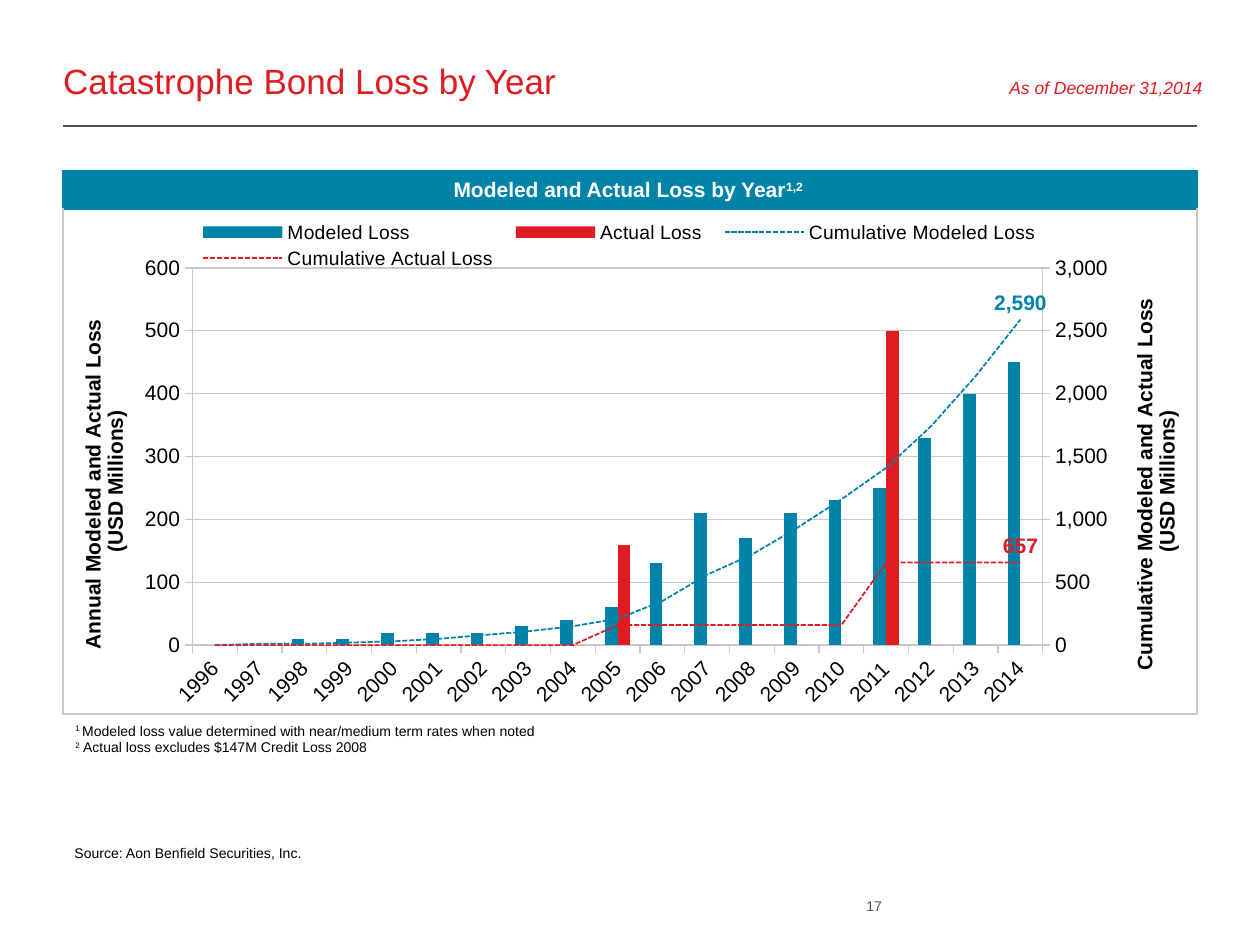
import copy

import pptx
import pptx.chart.axis
import pptx.chart.data
import pptx.dml.color
import pptx.enum.chart
import pptx.enum.dml
import pptx.enum.shapes
import pptx.enum.text
import pptx.oxml
import pptx.oxml.ns
import pptx.util

PX = 914400 / 126
COLORS = {"blue": "0083A9", "red": "E11B22", "gray": "C9CAC8",
          "dark": "4D4F53", "black": "000000", "white": "FFFFFF"}
RGB = {name: pptx.dml.color.RGBColor.from_string(value) for name, value in COLORS.items()}
qn = pptx.oxml.ns.qn
Pt = pptx.util.Pt
Align = pptx.enum.text.PP_ALIGN
Anchor = pptx.enum.text.MSO_ANCHOR


def box(*lengths):
    """Turn lengths in px into EMU."""
    return [round(length * PX) for length in lengths]


def add_runs(paragraph, parts, size, color, bold=False, italic=False):
    """Add runs from (text, is_superscript) pairs."""
    for text, superscript in parts:
        run = paragraph.add_run()
        run.text = text
        font = run.font
        font.name, font.size, font.bold, font.italic = "Arial", Pt(size), bold, italic
        font.color.rgb = RGB[color]
        if superscript:
            font._element.set("baseline", "30000")


presentation = pptx.Presentation()
presentation.slide_width, presentation.slide_height = box(1260, 945)
slide = presentation.slides.add_slide(presentation.slide_layouts[5])
shapes = slide.shapes

# Title and rule
title = shapes.title
title.left, title.top, title.width, title.height = box(63, 30, 1134, 72)
frame = title.text_frame
frame.margin_left = frame.margin_right = frame.margin_top = frame.margin_bottom = 0
frame.vertical_anchor = Anchor.BOTTOM
frame.paragraphs[0].alignment = Align.LEFT
add_runs(frame.paragraphs[0], [("Catastrophe Bond Loss by Year", False)], 20, "red")

rule = shapes.add_connector(pptx.enum.shapes.MSO_CONNECTOR.STRAIGHT, *box(63, 126, 1197, 126))
rule.line.color.rgb = RGB["dark"]
rule.line.width = Pt(0.75)
rule._element.spPr.append(pptx.oxml.parse_xml(
    f"<a:effectLst {pptx.oxml.ns.nsdecls('a')}/>"))

# Framed panel with its heading
table = shapes.add_table(2, 1, *box(63, 171, 1134, 543)).table
table.first_row = table.horz_banding = False
table.rows[0].height, table.rows[1].height = box(38, 505)
heading, body = table.cell(0, 0), table.cell(1, 0)
heading.fill.solid()
heading.fill.fore_color.rgb = RGB["blue"]
heading.vertical_anchor = Anchor.MIDDLE
heading.text_frame.paragraphs[0].alignment = Align.CENTER
add_runs(heading.text_frame.paragraphs[0],
         [("Modeled and Actual Loss by Year", False), ("1,2 ", True)], 12, "white", bold=True)
body.fill.background()
for cell, edge_colors in ((heading, ["blue"] * 4), (body, ["gray", "gray", "blue", "gray"])):
    properties = cell._tc.get_or_add_tcPr()
    for index, (edge, color) in enumerate(zip(("lnL", "lnR", "lnT", "lnB"), edge_colors)):
        properties.insert(index, pptx.oxml.parse_xml(
            f'<a:{edge} {pptx.oxml.ns.nsdecls("a")} w="12700"><a:solidFill>'
            f'<a:srgbClr val="{COLORS[color]}"/></a:solidFill></a:{edge}>'))

# Text boxes: place, paragraphs, size, color, italic, wrap
texts = [
    ((62, 838, 549, 30), [[("Source: Aon Benfield Securities, Inc.", False)]],
     8, "black", False, True),
    ((63, 716, 1134, 47),
     [[("1 ", True), ("Modeled loss value determined with near/medium term rates when noted", False)],
      [("2", True), (" Actual loss excludes $147M Credit Loss 2008", False)]],
     8, "black", False, True),
    ((997, 71, 224, 34), [[("As of December 31,2014", False)]], 10, "red", True, False),
]
for place, paragraphs, size, color, italic, wrap in texts:
    frame = shapes.add_textbox(*box(*place)).text_frame
    frame.word_wrap = wrap
    for index, parts in enumerate(paragraphs):
        paragraph = frame.add_paragraph() if index else frame.paragraphs[0]
        add_runs(paragraph, parts, size, color, italic=italic)

frame = shapes.add_textbox(*box(842, 872, 40, 42)).text_frame
frame.margin_left = frame.margin_right = frame.margin_top = frame.margin_bottom = 0
frame.vertical_anchor = Anchor.BOTTOM
frame.word_wrap = True
frame.paragraphs[0].alignment = Align.RIGHT
add_runs(frame.paragraphs[0], [("17", False)], 8, "dark")

# Chart: columns on the left axis, cumulative lines on the right axis
data = pptx.chart.data.CategoryChartData(number_format="#,##0")
data.categories = [str(year) for year in range(1996, 2015)]
data.add_series("Modeled Loss", [0, 0, 10, 10, 20, 20, 20, 30, 40, 60, 130, 210, 170, 210,
                                 230, 250, 330, 400, 450])
data.add_series("Actual Loss", [0] * 9 + [160] + [0] * 5 + [500] + [0] * 3)
data.add_series("Cumulative Modeled Loss", [0, 10, 10, 20, 30, 50, 80, 110, 150, 210, 350, 560,
                                            720, 930, 1160, 1410, 1740, 2140, 2590])
data.add_series("Cumulative Actual Loss", [0] * 9 + [160] * 6 + [657] * 4)
chart = shapes.add_chart(pptx.enum.chart.XL_CHART_TYPE.COLUMN_CLUSTERED,
                         *box(76, 212, 1109, 554), data).chart
chart.has_title = False
chart.font.name, chart.font.size = "Arial", Pt(10)
chart.font.color.rgb = RGB["black"]

category_axis, left_axis = chart.category_axis, chart.value_axis
left_axis.has_major_gridlines = True
grid_line = left_axis.major_gridlines.format.line
for line in (category_axis.format.line, left_axis.format.line, grid_line):
    line.color.rgb = RGB["gray"]
    line.width = Pt(0.75)
for axis in (category_axis, left_axis):
    axis.major_tick_mark = pptx.enum.chart.XL_TICK_MARK.OUTSIDE
    axis.tick_labels.font.size = Pt(12)
    axis.tick_labels.font.name = "Arial"
category_axis._element.find(qn("c:txPr")).find(qn("a:bodyPr")).set("rot", "-2700000")

# Move the cumulative series to a line plot with its own axes
plot_area = chart.element.chart.plotArea
column_plot = plot_area.find(qn("c:barChart"))
line_plot = pptx.oxml.parse_xml(
    f'<c:lineChart {pptx.oxml.ns.nsdecls("c")}><c:grouping val="standard"/>'
    '<c:varyColors val="0"/><c:marker val="1"/><c:axId val="5001"/><c:axId val="5002"/>'
    '</c:lineChart>')
for series in column_plot.findall(qn("c:ser"))[2:]:
    for column_setting in series.findall(qn("c:invertIfNegative")):
        series.remove(column_setting)
    line_plot.find(qn("c:marker")).addprevious(series)
column_plot.addnext(line_plot)

hidden_axis = copy.deepcopy(category_axis._element)
right_element = copy.deepcopy(left_axis._element)
left_axis._element.addnext(right_element)
right_element.addnext(hidden_axis)
for element, own, other in ((hidden_axis, "5001", "5002"), (right_element, "5002", "5001")):
    element.find(qn("c:axId")).set("val", own)
    element.find(qn("c:crossAx")).set("val", other)
right_element.find(qn("c:axPos")).set("val", "r")
right_element.find(qn("c:crosses")).set("val", "max")
right_axis = pptx.chart.axis.ValueAxis(right_element)
right_axis.has_major_gridlines = False
pptx.chart.axis.CategoryAxis(hidden_axis).visible = False

for axis, caption, maximum, number_format in (
        (left_axis, "Annual Modeled and Actual Loss", 600, "#,##0"),
        (right_axis, "Cumulative Modeled and Actual Loss", 3000, r"#,##0_);\(#,##0\)")):
    axis.minimum_scale, axis.maximum_scale, axis.major_unit = 0, maximum, maximum / 6
    axis.tick_labels.number_format = number_format
    axis.tick_labels.number_format_is_linked = False
    frame = axis.axis_title.text_frame
    frame.text = f"{caption} \n(USD Millions)"
    body_properties = frame._txBody.find(qn("a:bodyPr"))
    body_properties.set("rot", "-5400000")
    body_properties.set("vert", "horz")
    for paragraph in frame.paragraphs:
        font = paragraph.runs[0].font
        font.name, font.size, font.bold = "Arial", Pt(12), True
        font.color.rgb = RGB["black"]

columns, lines = chart.plots
columns.gap_width, columns.overlap = 150, 0
columns.vary_by_categories = False
for series, color in zip(columns.series, ("blue", "red")):
    series.format.fill.solid()
    series.format.fill.fore_color.rgb = RGB[color]
for series, color in zip(lines.series, ("blue", "red")):
    series.smooth = False
    series.marker.style = pptx.enum.chart.XL_MARKER_STYLE.NONE
    series.format.line.color.rgb = RGB[color]
    series.format.line.width = Pt(1)
    series.format.line.dash_style = pptx.enum.dml.MSO_LINE.SQUARE_DOT
    series.data_labels.show_value = False
    label = series.points[18].data_label
    label.font.name, label.font.size, label.font.bold = "Arial", Pt(12), True
    label.font.color.rgb = RGB[color]
    label.position = pptx.enum.chart.XL_LABEL_POSITION.ABOVE

# Fixed places for plot and legend, as fractions of the chart
chart.has_legend = True
legend = chart.legend
legend.position = pptx.enum.chart.XL_LEGEND_POSITION.LEFT
legend.include_in_layout = True
legend.font.name, legend.font.size = "Arial", Pt(11)
for element, target, place in ((plot_area, '<c:layoutTarget val="inner"/>', (0.105, 0.101, 0.767, 0.681)),
                               (legend._element, "", (0.1, 0.01, 0.78, 0.1))):
    for old in element.findall(qn("c:layout")):
        element.remove(old)
    sizes = "".join(f'<c:{name} val="{value}"/>' for name, value in zip("xywh", place))
    layout = pptx.oxml.parse_xml(
        f'<c:layout {pptx.oxml.ns.nsdecls("c")}><c:manualLayout>{target}<c:xMode val="edge"/>'
        f'<c:yMode val="edge"/>{sizes}</c:manualLayout></c:layout>')
    element.insert(0 if element is plot_area else 1, layout)

presentation.save("out.pptx")
